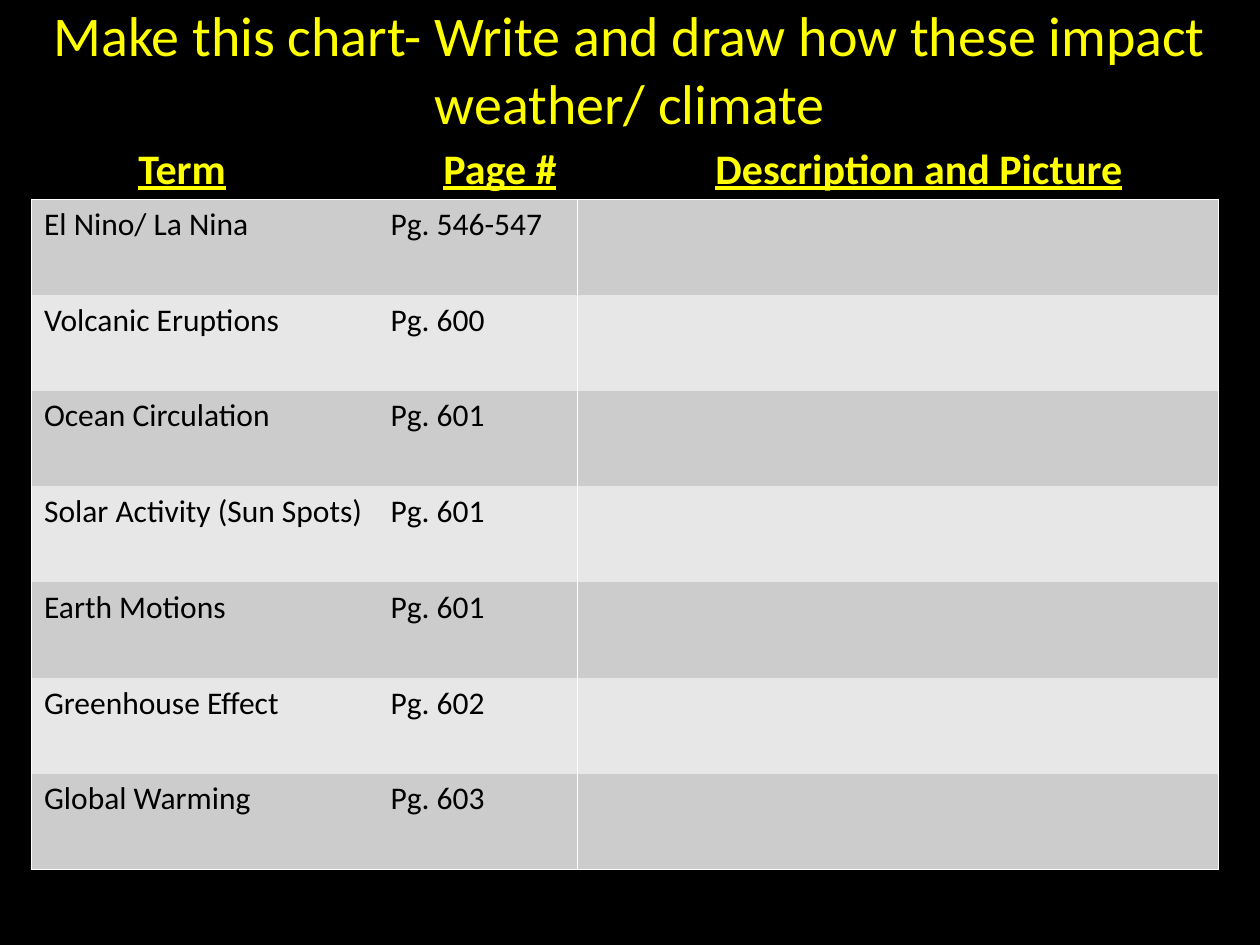
import dataclasses
import typing

import lxml.etree
import pptx
import pptx.dml.color
import pptx.enum.text
import pptx.oxml.ns
import pptx.util

Inches = pptx.util.Inches
HUES = {"back": "000000", "head": "FFFF00", "ink": "000000",
        "line": "FFFFFF", "odd": "CCCCCC", "even": "E7E7E7"}
TITLE = {"name": "Calibri", "size": pptx.util.Pt(32)}
HEAD = {"name": "Calibri", "size": pptx.util.Pt(24), "bold": True, "underline": True}
CELL = {"name": "Calibri", "size": pptx.util.Pt(18)}
WIDTHS = (2.75, 1.58, 5.09)
ROW = 0.76


@dataclasses.dataclass
class Label:
    text: str
    left: float
    width: float


@dataclasses.dataclass
class Topic:
    term: str
    page: str


LABELS = [
    Label("Term", 1, 1.33),
    Label("Page #", 3.42, 1.33),
    Label("Description and Picture", 5.58, 3.5),
]
TOPICS = [
    Topic("El Nino/ La Nina", "Pg. 546-547"),
    Topic("Volcanic Eruptions", "Pg. 600"),
    Topic("Ocean Circulation", "Pg. 601"),
    Topic("Solar Activity (Sun Spots)", "Pg. 601"),
    Topic("Earth Motions", "Pg. 601"),
    Topic("Greenhouse Effect", "Pg. 602"),
    Topic("Global Warming", "Pg. 603"),
]


def tint(hue: str) -> pptx.dml.color.RGBColor:
    return pptx.dml.color.RGBColor.from_string(HUES[hue])


def style(font: typing.Any, form: dict, hue: str) -> None:
    for key, value in form.items():
        setattr(font, key, value)
    font.color.rgb = tint(hue)


def edge(cell: typing.Any, sides: str) -> None:
    props = cell._tc.get_or_add_tcPr()
    name = pptx.oxml.ns.qn
    for side in "LRTB":
        line = lxml.etree.SubElement(props, name(f"a:ln{side}"), w="6350")
        if side in sides:
            fill = lxml.etree.SubElement(line, name("a:solidFill"))
            lxml.etree.SubElement(fill, name("a:srgbClr"), val=HUES["line"])
        else:
            lxml.etree.SubElement(line, name("a:noFill"))


def draw_title(slide: typing.Any, text: str) -> None:
    title = slide.shapes.title
    title.left, title.top = Inches(0), Inches(0)
    title.width, title.height = Inches(10), Inches(1.08)
    frame = title.text_frame
    frame.text = text
    frame.vertical_anchor = pptx.enum.text.MSO_ANCHOR.MIDDLE
    para = frame.paragraphs[0]
    para.alignment = pptx.enum.text.PP_ALIGN.CENTER
    style(para.runs[0].font, TITLE, "head")


def draw_label(slide: typing.Any, label: Label) -> None:
    box = slide.shapes.add_textbox(
        Inches(label.left), Inches(1.08), Inches(label.width), Inches(0.5))
    frame = box.text_frame
    frame.word_wrap = True
    frame.auto_size = pptx.enum.text.MSO_AUTO_SIZE.SHAPE_TO_FIT_TEXT
    frame.text = label.text
    style(frame.paragraphs[0].runs[0].font, HEAD, "head")


def draw_table(slide: typing.Any, topics: list[Topic]) -> None:
    count = len(topics)
    table = slide.shapes.add_table(
        count, len(WIDTHS), Inches(0.25), Inches(1.58),
        Inches(sum(WIDTHS)), Inches(ROW * count)).table
    table.first_row = False
    table.horz_banding = False
    for column, width in zip(table.columns, WIDTHS):
        column.width = Inches(width)
    for row, topic in enumerate(topics):
        table.rows[row].height = Inches(ROW)
        ends = ("T" if row == 0 else "") + ("B" if row == count - 1 else "")
        for col, (text, sides) in enumerate(
                [(topic.term, "L"), (topic.page, "R"), ("", "LR")]):
            cell = table.cell(row, col)
            edge(cell, sides + ends)
            cell.fill.solid()
            cell.fill.fore_color.rgb = tint("even" if row % 2 else "odd")
            if text:
                cell.text = text
                style(cell.text_frame.paragraphs[0].runs[0].font, CELL, "ink")


def main() -> None:
    deck = pptx.Presentation()
    deck.slide_width, deck.slide_height = Inches(10), Inches(7.5)
    slide = deck.slides.add_slide(deck.slide_layouts[5])
    slide.background.fill.solid()
    slide.background.fill.fore_color.rgb = tint("back")
    draw_title(slide, "Make this chart- Write and draw how these impact weather/ climate")
    draw_table(slide, TOPICS)
    for label in LABELS:
        draw_label(slide, label)
    deck.save("out.pptx")


if __name__ == "__main__":
    main()
